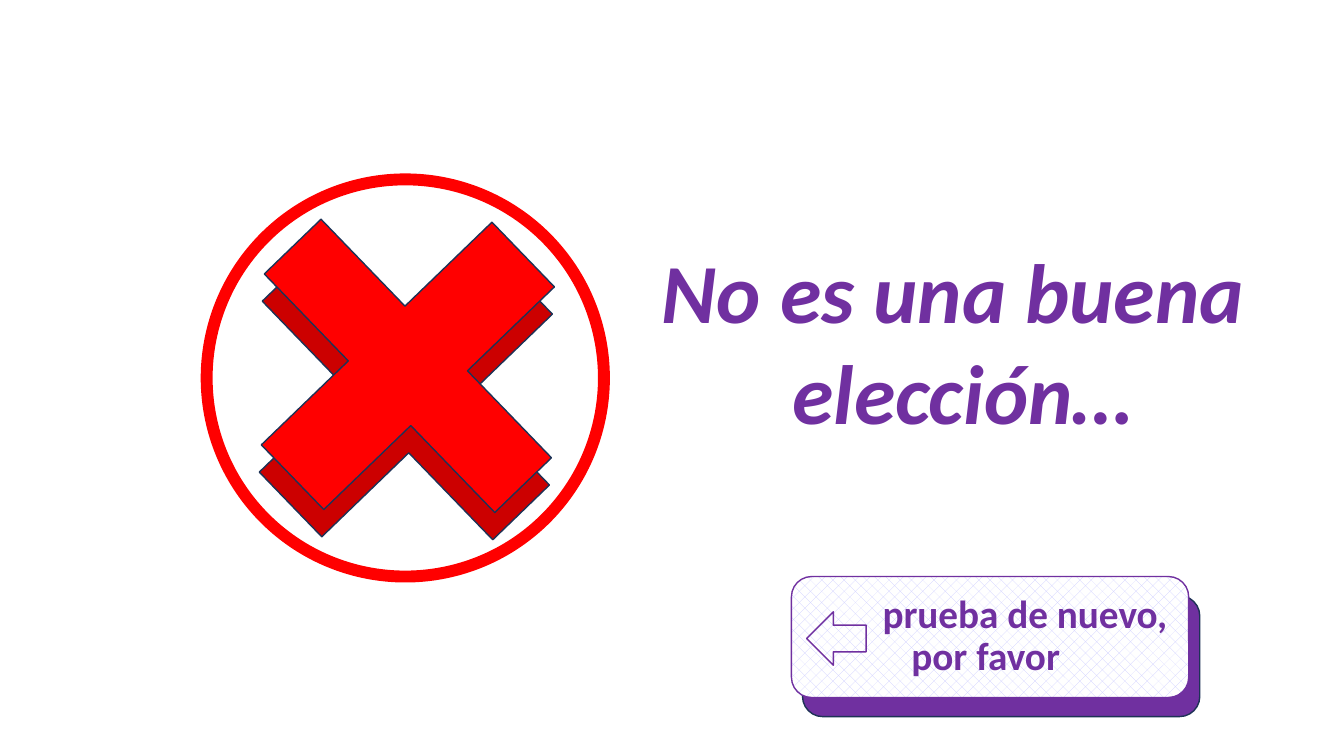
from dataclasses import dataclass
from typing import Optional

from pptx import Presentation
from pptx.dml.color import RGBColor
from pptx.enum.dml import MSO_PATTERN
from pptx.enum.shapes import MSO_SHAPE
from pptx.enum.text import MSO_ANCHOR, PP_ALIGN
from pptx.util import Inches, Pt


@dataclass(frozen=True)
class Theme:
    font: str = "Calibri"
    purple: str = "7030A0"
    red: str = "FF0000"
    dark_red: str = "CC0000"
    navy: str = "1E3256"
    lavender: str = "CCCCFF"
    white: str = "FFFFFF"
    message_size: int = 60
    button_size: int = 28


@dataclass(frozen=True)
class Figure:
    preset: MSO_SHAPE
    left: float
    top: float
    width: float
    height: float
    line: str
    line_width: float = 1
    fill: Optional[str] = None
    rotation: float = 0
    adjustment: Optional[float] = None


THEME = Theme()


def color(value: str) -> RGBColor:
    return RGBColor.from_string(value)


def draw_figure(slide, figure: Figure):
    shape = slide.shapes.add_shape(
        figure.preset, Inches(figure.left), Inches(figure.top),
        Inches(figure.width), Inches(figure.height))
    shape.shadow.inherit = False
    shape.rotation = figure.rotation
    if figure.adjustment is not None:
        shape.adjustments[0] = figure.adjustment
    if figure.fill is None:
        shape.fill.background()
    else:
        shape.fill.solid()
        shape.fill.fore_color.rgb = color(figure.fill)
    shape.line.color.rgb = color(figure.line)
    shape.line.width = Pt(figure.line_width)
    return shape


def style_paragraph(paragraph, size: int, italic: bool = False) -> None:
    paragraph.alignment = PP_ALIGN.CENTER
    font = paragraph.font
    font.name, font.size = THEME.font, Pt(size)
    font.bold, font.italic = True, italic
    font.color.rgb = color(THEME.purple)


def draw_message(slide) -> None:
    box = slide.shapes.add_textbox(Inches(6.43), Inches(2.33), Inches(6.23), Inches(2.12))
    frame = box.text_frame
    frame.word_wrap = False
    frame.text = "No es una buena \nelección…"
    for paragraph in frame.paragraphs:
        style_paragraph(paragraph, THEME.message_size, italic=True)


def draw_cross(slide) -> None:
    draw_figure(slide, Figure(MSO_SHAPE.FLOWCHART_CONNECTOR, 2.05, 1.78, 3.94, 3.94,
                              THEME.red, line_width=8.5))
    # The darker cross lies behind, as a shadow
    for left, top, fill in ((2.38, 2.31, THEME.dark_red), (2.4, 2.04, THEME.red)):
        draw_figure(slide, Figure(MSO_SHAPE.CROSS, left, top, 3.29, 3.18, THEME.navy,
                                  fill=fill, rotation=46, adjustment=0.377))


def draw_button(slide) -> None:
    draw_figure(slide, Figure(MSO_SHAPE.ROUNDED_RECTANGLE, 7.96, 5.91, 3.94, 1.2,
                              THEME.navy, fill=THEME.purple))
    button = draw_figure(slide, Figure(MSO_SHAPE.ROUNDED_RECTANGLE, 7.85, 5.72, 3.94, 1.2,
                                       THEME.purple))
    button.fill.patterned()
    button.fill.pattern = MSO_PATTERN.PERCENT_25
    button.fill.fore_color.rgb = color(THEME.lavender)
    button.fill.back_color.rgb = color(THEME.white)

    # The first line is indented to clear the arrow
    frame = button.text_frame
    frame.word_wrap = True
    frame.vertical_anchor = MSO_ANCHOR.MIDDLE
    frame.text = "prueba de nuevo, por favor "
    paragraph = frame.paragraphs[0]
    paragraph.line_spacing = 0.9
    paragraph._p.get_or_add_pPr().set("indent", str(Inches(0.69)))
    style_paragraph(paragraph, THEME.button_size)

    draw_figure(slide, Figure(MSO_SHAPE.LEFT_ARROW, 8, 6.07, 0.59, 0.53, THEME.purple))


def main() -> None:
    presentation = Presentation()
    presentation.slide_width, presentation.slide_height = Inches(13.33), Inches(7.5)
    slide = presentation.slides.add_slide(presentation.slide_layouts[6])
    draw_message(slide)
    draw_cross(slide)
    draw_button(slide)
    presentation.save("out.pptx")


if __name__ == "__main__":
    main()
